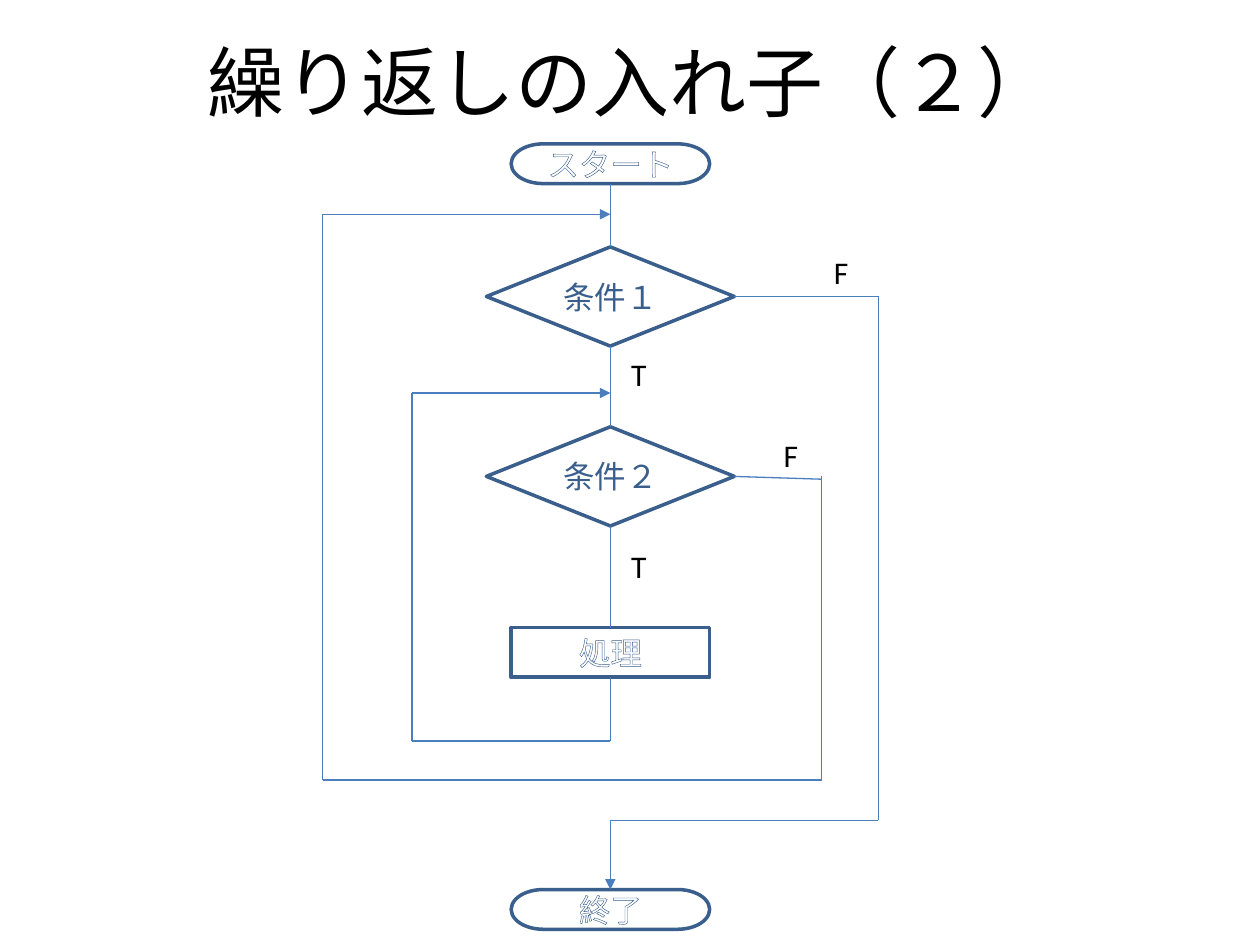
from dataclasses import dataclass
from itertools import pairwise

from lxml.etree import SubElement
from pptx import Presentation
from pptx.dml.color import RGBColor
from pptx.enum.shapes import MSO_CONNECTOR, MSO_SHAPE
from pptx.enum.text import MSO_ANCHOR, MSO_AUTO_SIZE, PP_ALIGN
from pptx.oxml import parse_xml
from pptx.oxml.ns import nsdecls, qn
from pptx.util import Pt


@dataclass(frozen=True)
class Theme:
    """Colours, type sizes and line widths of the slide."""
    font: str = "Calibri"
    title_size: float = 44
    text_size: float = 18
    text: str = "000000"
    light: str = "FFFFFF"
    border: str = "3A5F8C"
    flow: str = "4B7EBC"
    border_width: float = 2
    flow_width: float = 0.75


THEME = Theme()
TOP, BOTTOM, RIGHT = 0, 2, 3


def add_run(p, text, size, color=None):
    """Add a run; without a colour its letters stay unfilled."""
    r = p.add_run()
    r.text = text
    r.font.name, r.font.size = THEME.font, Pt(size)
    if color:
        r.font.color.rgb = RGBColor.from_string(color)
    else:
        r.font.fill.background()
    return r


def outline_run(r):
    """Outline the letters of a run in the border colour."""
    ln = parse_xml(
        f'<a:ln {nsdecls("a")} w="{Pt(THEME.flow_width)}"><a:solidFill>'
        f'<a:srgbClr val="{THEME.border}"/></a:solidFill></a:ln>')
    r._r.get_or_add_rPr().insert(0, ln)


def add_title(s, text, left, top, width, height):
    """Place the slide title in the given box."""
    sp = s.shapes.title
    sp.left, sp.top, sp.width, sp.height = map(Pt, (left, top, width, height))
    tf = sp.text_frame
    tf.vertical_anchor = MSO_ANCHOR.MIDDLE
    p = tf.paragraphs[0]
    p.alignment = PP_ALIGN.CENTER
    add_run(p, text, THEME.title_size, THEME.text)


def add_node(s, kind, text, center, top, width, height, color=None):
    """Add a flowchart symbol centred on the vertical axis."""
    sp = s.shapes.add_shape(kind, Pt(center - width / 2), Pt(top),
                            Pt(width), Pt(height))
    sp.shadow.inherit = False
    sp.fill.background()
    sp.line.color.rgb = RGBColor.from_string(THEME.border)
    sp.line.width = Pt(THEME.border_width)
    tf = sp.text_frame
    tf.word_wrap = True
    tf.vertical_anchor = MSO_ANCHOR.MIDDLE
    p = tf.paragraphs[0]
    p.alignment = PP_ALIGN.CENTER
    outline_run(add_run(p, text, THEME.text_size, color))
    return sp


def add_route(s, points, begin=None, end=None, arrow=False):
    """Draw straight connectors through points, joined to symbols at the ends."""
    lines = []
    for (x1, y1), (x2, y2) in pairwise(points):
        cx = s.shapes.add_connector(MSO_CONNECTOR.STRAIGHT,
                                    Pt(x1), Pt(y1), Pt(x2), Pt(y2))
        cx.line.color.rgb = RGBColor.from_string(THEME.flow)
        cx.line.width = Pt(THEME.flow_width)
        SubElement(cx._element.spPr, qn("a:effectLst"))
        lines.append(cx)
    if begin:
        lines[0].begin_connect(*begin)
    if end:
        lines[-1].end_connect(*end)
    if arrow:
        SubElement(lines[-1].line._get_or_add_ln(), qn("a:tailEnd"), type="triangle")


def add_label(s, text, left, top):
    """Add a branch label."""
    tf = s.shapes.add_textbox(Pt(left), Pt(top), Pt(72), Pt(29)).text_frame
    tf.word_wrap = True
    tf.auto_size = MSO_AUTO_SIZE.SHAPE_TO_FIT_TEXT
    add_run(tf.paragraphs[0], text, THEME.text_size, THEME.text)


def add_flowchart(s, left, top, width, height):
    """Draw the nested loop flowchart in the given box."""
    axis, right = left + 164.4, left + width
    inner_left, inner_right = left + 51.1, left + 285.1
    box_w, end_h, cond_w, cond_h = 113.4, 22.7, 141.7, 56.7
    cond1_y, cond2_y, process_y = top + 58.9, top + 161.7, top + 276.4
    outer_join, inner_join = top + 40.2, top + 142.4
    inner_turn, outer_turn, exit_turn = top + 341.2, top + 363.5, top + 386.5
    end_y = top + height - end_h
    cond_right = axis + cond_w / 2
    mid1, mid2 = cond1_y + cond_h / 2, cond2_y + cond_h / 2

    start = add_node(s, MSO_SHAPE.FLOWCHART_TERMINATOR, "スタート",
                     axis, top, box_w, end_h, THEME.light)
    end = add_node(s, MSO_SHAPE.FLOWCHART_TERMINATOR, "終了",
                   axis, end_y, box_w, end_h, THEME.light)
    cond1 = add_node(s, MSO_SHAPE.FLOWCHART_DECISION, "条件１",
                     axis, cond1_y, cond_w, cond_h)
    cond2 = add_node(s, MSO_SHAPE.FLOWCHART_DECISION, "条件２",
                     axis, cond2_y, cond_w, cond_h)
    process = add_node(s, MSO_SHAPE.FLOWCHART_PROCESS, "処理",
                       axis, process_y, box_w, 28.4, THEME.light)

    for upper, lower in pairwise((start, cond1, cond2, process)):
        add_route(s, [(axis, top), (axis, end_y)], (upper, BOTTOM), (lower, TOP))
    add_route(s, [(cond_right, mid1), (right, mid1), (right, exit_turn),
                  (axis, exit_turn), (axis, end_y)],
              (cond1, RIGHT), (end, TOP), arrow=True)
    add_route(s, [(axis, process_y), (axis, inner_turn), (inner_left, inner_turn),
                  (inner_left, inner_join), (axis, inner_join)],
              (process, BOTTOM), arrow=True)
    add_route(s, [(cond_right, mid2), (inner_right, mid2 + 1.6)], (cond2, RIGHT))
    add_route(s, [(inner_right, mid2), (inner_right, outer_turn), (left, outer_turn),
                  (left, outer_join), (axis, outer_join)], arrow=True)

    add_label(s, "F", left + 256.3, top + 163.3)
    add_label(s, "T", axis + 4.8, top + 226.8)
    add_label(s, "F", inner_right, cond1_y)
    add_label(s, "T", axis + 4.8, top + 117.4)


def main():
    """Build and save the slide."""
    prs = Presentation()
    prs.slide_width, prs.slide_height = Pt(720), Pt(540)
    s = prs.slides.add_slide(prs.slide_layouts[5])
    add_title(s, "繰り返しの入れ子（２）", 36.7, 1.4, 648, 90)
    add_flowchart(s, 184.4, 82.2, 317.5, 448.8)
    prs.save("out.pptx")


if __name__ == "__main__":
    main()
